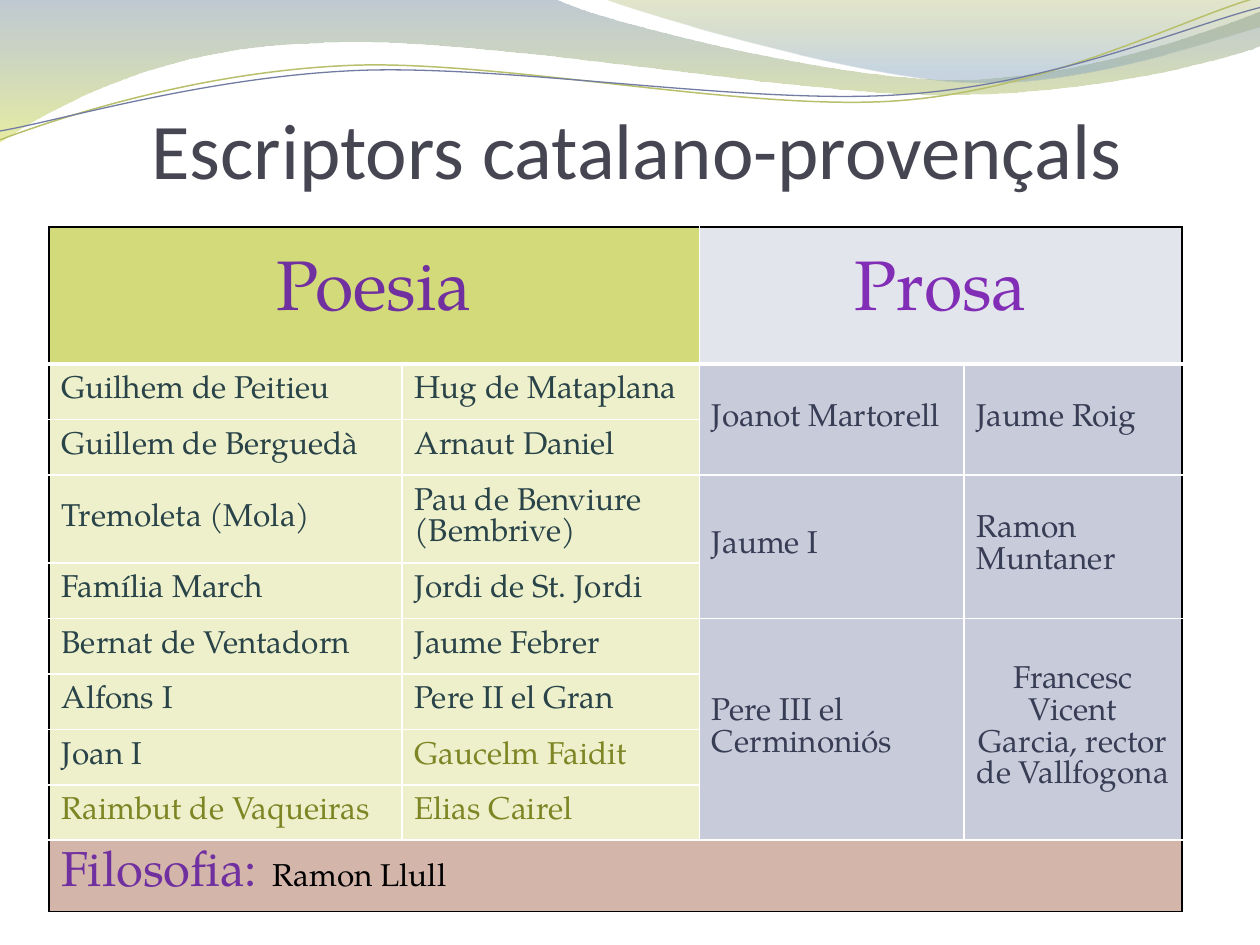
from pptx import Presentation
from pptx.dml.color import RGBColor
from pptx.enum import text as t
from pptx.oxml import parse_xml
from pptx.oxml.ns import nsdecls
from pptx.util import Inches, Pt

BODY_FONT, TITLE_FONT = "TeX Gyre Pagella", "Calibri"
BLACK, WHITE = RGBColor(0, 0, 0), RGBColor(255, 255, 255)
TITLE_GREY = RGBColor(0x46, 0x46, 0x53)
PURPLE, VIOLET = RGBColor(0x70, 0x30, 0xA0), RGBColor(0x81, 0x2D, 0xB5)
TEAL, OLIVE, NAVY = RGBColor(0x29, 0x43, 0x49), RGBColor(0x7D, 0x85, 0x25), RGBColor(0x37, 0x3D, 0x54)
LIME, PALE_LIME = RGBColor(0xD2, 0xDA, 0x7A), RGBColor(0xED, 0xF0, 0xCA)
MIST, LAVENDER = RGBColor(0xE3, 0xE5, 0xED), RGBColor(0xC7, 0xCB, 0xDA)
ROSE = RGBColor(0xD4, 0xB5, 0xAA)
STEEL, WAVE_LIME = RGBColor(0x72, 0x88, 0x9B), RGBColor(0xD3, 0xDE, 0x57)
MOSS, SKY = RGBColor(0xA4, 0xAC, 0x50), RGBColor(0x84, 0xA3, 0xBD)
LINE_GREEN, LINE_BLUE = RGBColor(0xB9, 0xC0, 0x6C), RGBColor(0x72, 0x7C, 0xA3)

TITLE = "Escriptors catalano-provençals"
POETS = [
    ("Guilhem de Peitieu", "Hug de Mataplana"),
    ("Guillem de Berguedà", "Arnaut Daniel"),
    ("Tremoleta (Mola)", "Pau de Benviure (Bembrive)"),
    ("Família March", "Jordi de St. Jordi"),
    ("Bernat de Ventadorn", "Jaume Febrer"),
    ("Alfons I", "Pere II el Gran"),
    ("Joan I", "Gaucelm Faidit"),
    ("Raimbut de Vaqueiras", "Elias Cairel"),
]
OLIVE_POETS = {"Gaucelm Faidit", "Raimbut de Vaqueiras", "Elias Cairel"}
PROSE = [
    (2, "Joanot Martorell", "Jaume Roig"),
    (2, "Jaume I", "Ramon Muntaner"),
    (4, "Pere III el Cerminoniós", "Francesc Vicent Garcia, rector de Vallfogona"),
]
CENTRED = {"Poesia", "Prosa", "Francesc Vicent Garcia, rector de Vallfogona"}
PHILOSOPHY = [("Filosofia:", 28, PURPLE), ("  ", 18, PURPLE), ("Ramon Llull", 18, BLACK)]
COLUMNS = [2.8, 2.36, 2.1, 1.73]
ROWS = [1.09] + [0.44] * 9

BANDS = [
    ([[(0, 0)], [(4.4, -0.01)],
      [(4.76, 0.17), (6.64, 0.63), (7.58, 0.63)], [(8.53, 0.63), (9.58, 0.26), (10, 0.09)],
      [(10.01, 0.36)], [(9.83, 0.44), (8.7, 0.76), (7.46, 0.75)],
      [(6.22, 0.75), (3.82, 0.28), (2.57, 0.34)], [(1.29, 0.36), (0.46, 0.83), (-0.01, 1.13)]],
     [(0, STEEL, 45), (1, WAVE_LIME, 55)]),
    ([[(4.79, -0.01)], [(5.09, 0.11), (6.82, 0.62), (7.69, 0.65)],
      [(8.56, 0.69), (9.61, 0.32), (10, 0.21)], [(10, 0)]],
     [(0, MOSS, 30), (0.8, SKY, 45)]),
]
STRANDS = [
    ([[(0, 1.11)], [(0.48, 0.93), (1.58, 0.57), (2.77, 0.52)],
      [(3.95, 0.47), (5.93, 0.89), (7.13, 0.8)], [(8.33, 0.71), (9.38, 0.15), (9.98, -0.02)]],
     LINE_GREEN, 0.85),
    ([[(0, 1.04)], [(0.47, 0.96), (1.64, 0.61), (2.83, 0.56)],
      [(4.03, 0.51), (5.97, 0.84), (7.17, 0.75)], [(8.36, 0.67), (9.41, 0.21), (10, 0.06)]],
     LINE_BLUE, 0.75),
]


def bend(wave, segments):
    outline = wave.element.spPr.find(".//{*}path")
    corners = iter(outline.findall("{*}lnTo"))
    for segment in segments[1:]:
        nodes = [next(corners) for _ in segment]
        if len(nodes) == 3:
            curve = parse_xml(f'<a:cubicBezTo {nsdecls("a")}/>')
            nodes[0].addprevious(curve)
            for node in nodes:
                curve.append(node[0])
                outline.remove(node)


def draw_wave(slide, segments, close):
    start, *rest = [(Inches(x), Inches(y)) for segment in segments for x, y in segment]
    builder = slide.shapes.build_freeform(*start)
    builder.add_line_segments(rest, close=close)
    wave = builder.convert_to_shape()
    bend(wave, segments)
    wave.shadow.inherit = False
    return wave


def draw_band(slide, segments, stops):
    band = draw_wave(slide, segments, True)
    band.line.fill.background()
    band.fill.gradient()
    band.fill.gradient_angle = 270
    for stop, (position, color, _) in zip(band.fill.gradient_stops, stops):
        stop.position = position
        stop.color.rgb = color
    for color, (_, _, opacity) in zip(band.element.spPr.findall(".//{*}srgbClr"), stops):
        color.append(parse_xml(f'<a:alpha {nsdecls("a")} val="{opacity * 1000}"/>'))


def draw_strand(slide, segments, color, width):
    strand = draw_wave(slide, segments, False)
    strand.fill.background()
    strand.line.color.rgb = color
    strand.line.width = Pt(width)


def write(paragraph, runs, font, centred):
    paragraph.alignment = t.PP_ALIGN.CENTER if centred else t.PP_ALIGN.LEFT
    for words, size, color in runs:
        run = paragraph.add_run()
        run.text = words
        run.font.name = font
        run.font.size = Pt(size)
        run.font.bold = False
        run.font.color.rgb = color


def regions():
    yield 0, 0, 1, 2, [("Poesia", 40, PURPLE)], LIME
    yield 0, 2, 1, 2, [("Prosa", 40, VIOLET)], MIST
    for row, pair in enumerate(POETS, 1):
        for col, poet in enumerate(pair):
            yield row, col, 1, 1, [(poet, 18, OLIVE if poet in OLIVE_POETS else TEAL)], PALE_LIME
    row = 1
    for height, *pair in PROSE:
        for col, author in enumerate(pair, 2):
            yield row, col, height, 1, [(author, 18, NAVY)], LAVENDER
        row += height
    yield row, 0, 1, 4, PHILOSOPHY, ROSE


def set_borders(cell, row, col, height, width):
    bottom, right = row + height, col + width
    edges = {
        "L": (col == 0, 1),
        "R": (right == len(COLUMNS), 1),
        "T": (row == 0, 3 if row == 1 else 1),
        "B": (bottom == len(ROWS), 3 if bottom == 1 else 1),
    }
    properties = cell._tc.get_or_add_tcPr()
    for side, (outer, points) in edges.items():
        properties.append(parse_xml(
            f'<a:ln{side} {nsdecls("a")} w="{Pt(points)}"><a:solidFill>'
            f'<a:srgbClr val="{BLACK if outer else WHITE}"/></a:solidFill></a:ln{side}>'))


def draw_table(slide):
    table = slide.shapes.add_table(
        len(ROWS), len(COLUMNS), Inches(0.39), Inches(1.8),
        Inches(sum(COLUMNS)), Inches(sum(ROWS))).table
    table.first_row = table.horz_banding = False
    for column, width in zip(table.columns, COLUMNS):
        column.width = Inches(width)
    for line, height in zip(table.rows, ROWS):
        line.height = Inches(height)
    for row, col, height, width, runs, fill in regions():
        origin = table.cell(row, col)
        if height * width > 1:
            origin.merge(table.cell(row + height - 1, col + width - 1))
        for r in range(row, row + height):
            for c in range(col, col + width):
                cell = table.cell(r, c)
                set_borders(cell, row, col, height, width)
                cell.fill.solid()
                cell.fill.fore_color.rgb = fill
        origin.vertical_anchor = t.MSO_ANCHOR.MIDDLE
        write(origin.text_frame.paragraphs[0], runs, BODY_FONT, runs[0][0] in CENTRED)


def main():
    deck = Presentation()
    deck.slide_width, deck.slide_height = Inches(10), Inches(7.5)
    slide = deck.slides.add_slide(deck.slide_layouts[6])
    for band in BANDS:
        draw_band(slide, *band)
    for strand in STRANDS:
        draw_strand(slide, *strand)
    heading = slide.shapes.add_textbox(Inches(0.55), Inches(0.7), Inches(9), Inches(0.85)).text_frame
    heading.word_wrap = True
    heading.vertical_anchor = t.MSO_ANCHOR.BOTTOM
    heading.margin_left = heading.margin_right = heading.margin_bottom = 0
    write(heading.paragraphs[0], [(TITLE, 45, TITLE_GREY)], TITLE_FONT, True)
    draw_table(slide)
    deck.save("out.pptx")


if __name__ == "__main__":
    main()
